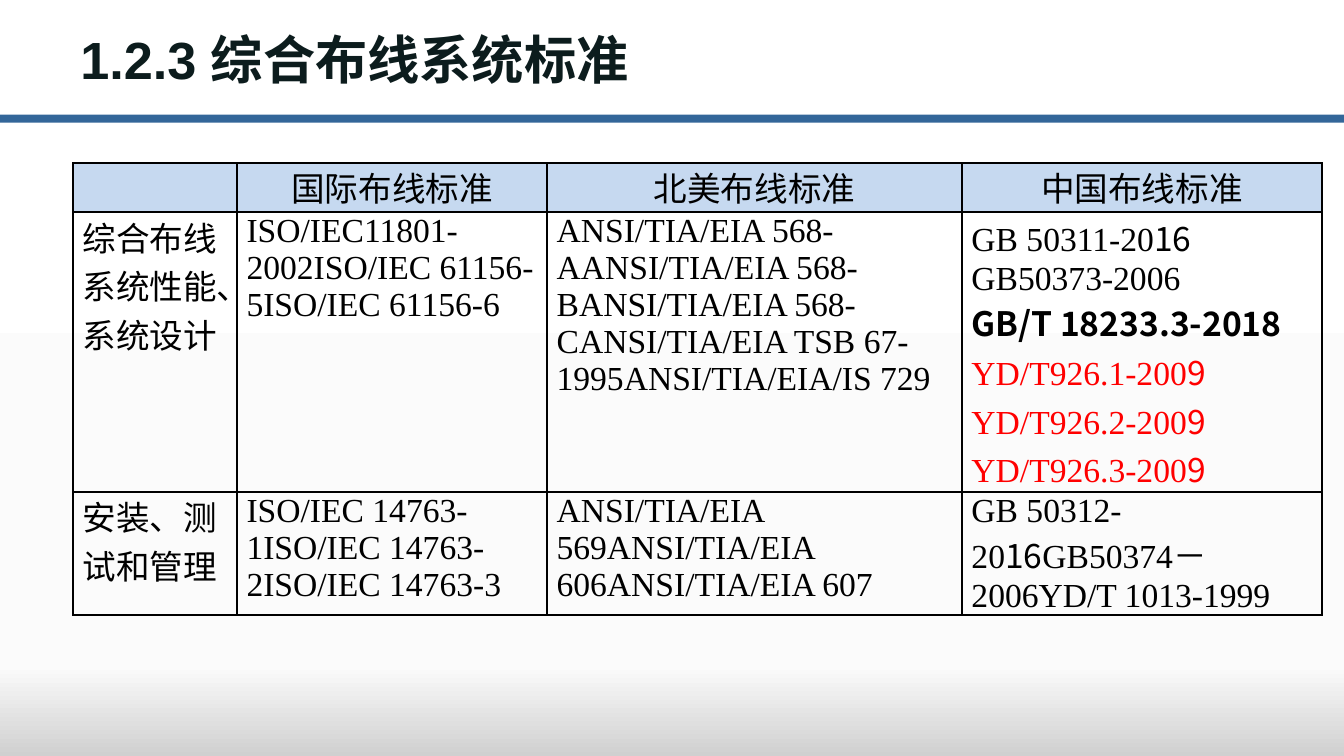
from copy import deepcopy

from pptx import Presentation
from pptx import util as u
from pptx.dml.color import RGBColor
from pptx.enum import shapes, text
from pptx.oxml import ns, parse_xml

SERIF = "Times New Roman"
SANS = "Calibri"
CJK = "Noto Sans CJK SC"
RED = "FF0000"


def color(value):
    return RGBColor.from_string(value)


def add_text(paragraph, content, font=SERIF, size=18, hex_color="000000", bold=False):
    run = paragraph.add_run()
    run.text = content
    run.font.size = u.Pt(size)
    run.font.bold = bold
    run.font.color.rgb = color(hex_color)
    run.font.name = font
    east_asian = parse_xml(f'<a:ea {ns.nsdecls("a")} typeface="{CJK}"/>')
    run.font._element.append(east_asian)


presentation = Presentation()
presentation.slide_width = u.Cm(25.4)
presentation.slide_height = u.Cm(14.29)
slide = presentation.slides.add_slide(presentation.slide_layouts[6])

background = slide.background.fill
background.gradient()
background.gradient_angle = 270
stop_list = next(slide.element.iter(ns.qn("a:gsLst")))
stop_list.insert(1, deepcopy(stop_list[0]))
gradient = [(0, "FFFFFF"), (0.88, "FBFBFB"), (1, "D0D0D0")]
for stop, (position, hex_color) in zip(background.gradient_stops, gradient):
    stop.position = position
    stop.color.rgb = color(hex_color)

rule = slide.shapes.add_shape(
    shapes.MSO_SHAPE.RECTANGLE, u.Cm(-0.02), u.Cm(2.17), u.Cm(25.45), u.Cm(0.15)
)
rule.shadow.inherit = False
rule.fill.solid()
rule.fill.fore_color.rgb = color("336699")
rule.line.fill.background()

title = slide.shapes.add_textbox(u.Cm(1.27), u.Cm(0.22), u.Cm(22.68), u.Cm(1.78))
title.text_frame.word_wrap = True
title.text_frame.vertical_anchor = text.MSO_ANCHOR.MIDDLE
add_text(title.text_frame.paragraphs[0], "1.2.3 综合布线系统标准",
         font="Arial", size=28, hex_color="0C1C1D", bold=True)

sans, cjk, red = {"font": SANS}, {"font": CJK}, {"hex_color": RED}
red_cjk = {"font": CJK, "hex_color": RED}
rows = [
    [
        [],
        [[("国际布线标准", sans)]],
        [[("北美布线标准", sans)]],
        [[("中国布线标准", sans)]],
    ],
    [
        [[("综合布线系统性能、系统设计", sans)]],
        [[("ISO/IEC11801-2002ISO/IEC 61156-5ISO/IEC 61156-6", {})]],
        [[("ANSI/TIA/EIA 568-AANSI/TIA/EIA 568-BANSI/TIA/EIA 568-C"
           "ANSI/TIA/EIA TSB 67-1995ANSI/TIA/EIA/IS 729", {})]],
        [
            [("GB 50311-20", {}), ("16", cjk)],
            [("GB50373-2006", {})],
            [("GB/T 18233.3-2018", {"font": CJK, "bold": True})],
            [("YD/T926.1-200", red), ("9", red_cjk),
             (" YD/T926.2-200", red), ("9", red_cjk)],
            [("YD/T926.3-200", red), ("9", red_cjk)],
        ],
    ],
    [
        [[("安装、测试和管理", sans)]],
        [[("ISO/IEC 14763-1ISO/IEC 14763-2ISO/IEC 14763-3", {})]],
        [[("ANSI/TIA/EIA 569ANSI/TIA/EIA 606ANSI/TIA/EIA 607", {})]],
        [[("GB 50312-20", {}), ("16", cjk), ("GB50374－2006YD/T 1013-1999", {})]],
    ],
]

table = slide.shapes.add_table(
    3, 4, u.Cm(1.38), u.Cm(3.08), u.Cm(23.6), u.Cm(8.54)
).table
table.first_row = False
table.horz_banding = False
for column, width in zip(table.columns, [3.1, 5.86, 7.84, 6.8]):
    column.width = u.Cm(width)
for row, height in zip(table.rows, [0.93, 5.29, 2.32]):
    row.height = u.Cm(height)

for row_index, row in enumerate(rows):
    for column_index, paragraphs in enumerate(row):
        cell = table.cell(row_index, column_index)
        cell.margin_left = cell.margin_right = u.Cm(0.18)
        cell.margin_top = cell.margin_bottom = 0
        for side in ("lnL", "lnR", "lnT", "lnB"):
            cell._tc.get_or_add_tcPr().append(parse_xml(
                f'<a:{side} {ns.nsdecls("a")} w="12700"><a:solidFill>'
                f'<a:srgbClr val="000000"/></a:solidFill></a:{side}>'
            ))
        if row_index == 0:
            cell.fill.solid()
            cell.fill.fore_color.rgb = color("C6D9F0")
        else:
            cell.fill.background()
        for index, runs in enumerate(paragraphs):
            frame = cell.text_frame
            paragraph = frame.add_paragraph() if index else frame.paragraphs[0]
            if row_index == 0:
                paragraph.alignment = text.PP_ALIGN.CENTER
            for content, style in runs:
                add_text(paragraph, content, **style)

presentation.save("out.pptx")
